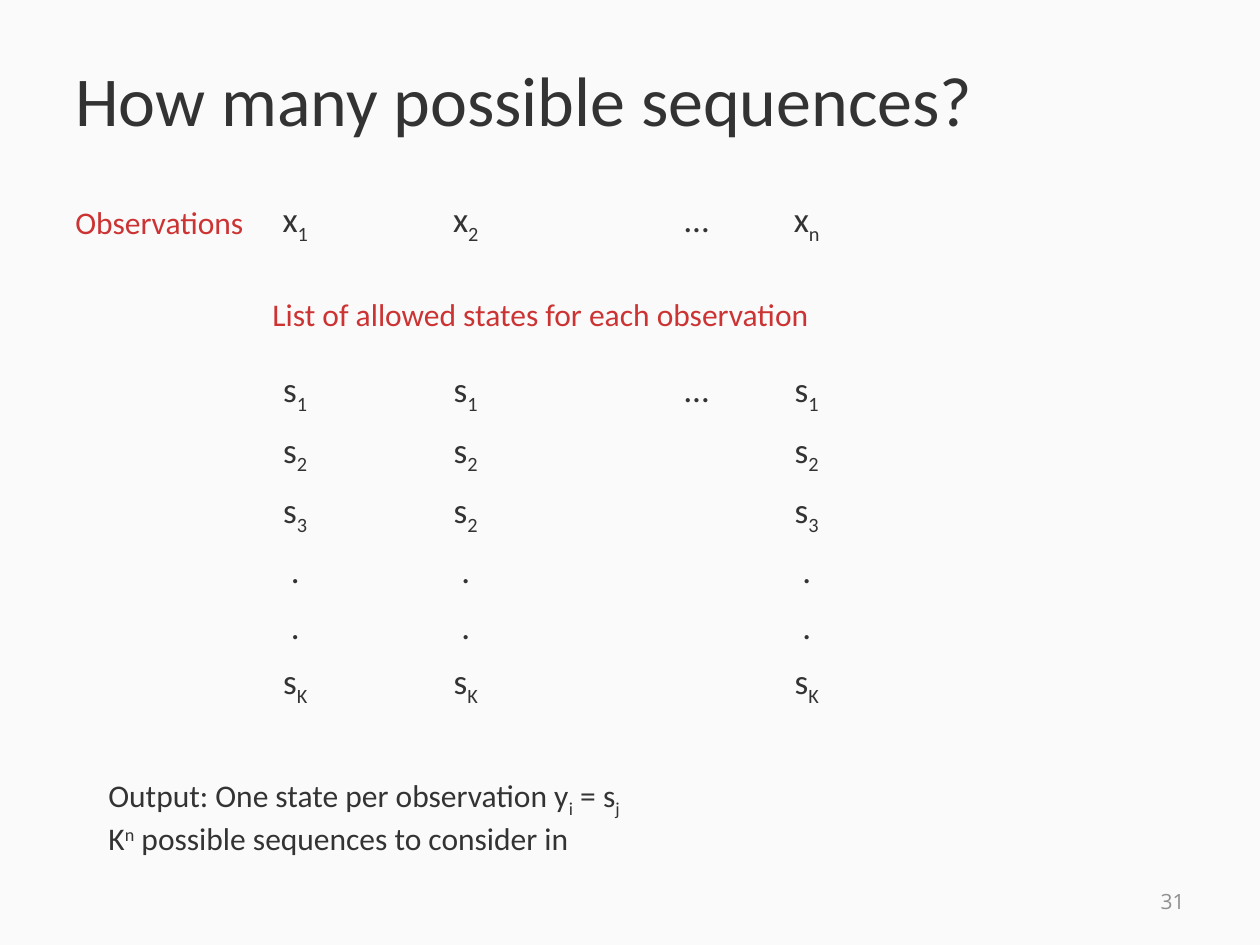
from pptx import Presentation
from pptx.dml.color import RGBColor as RGB
from pptx.enum.text import MSO_ANCHOR as Anchor, MSO_AUTO_SIZE as Auto, PP_ALIGN as Align
from pptx.util import Inches, Pt

PAPER = RGB(0xFA, 0xFA, 0xFA)
INK = RGB(0x33, 0x33, 0x33)
RED = RGB(0xCC, 0x33, 0x33)
GRAY = RGB(0x90, 0x90, 0x90)
SCALE = Inches(1) / 126
SHIFT = {"_": "-25000", "^": "30000"}
PLAIN = "{2D5ABB26-0587-4C30-8999-92F81FD0307C}"


def emu(*px):
    return [round(n * SCALE) for n in px]


class Sheet:
    """Hold the text style and the current slide; '|_' and '|^' start sub- and superscripts."""

    def __init__(self, slide, font="Calibri", size=18):
        self.slide, self.font, self.size = slide, font, size
        fill = slide.background.fill
        fill.solid()
        fill.fore_color.rgb = PAPER

    def line(self, par, text, color=INK, size=None, font=None, align=Align.LEFT):
        par.alignment = align
        for part in text.split("|"):
            run = par.add_run()
            run.text = part.lstrip("_^")
            face = run.font
            face.name = font or self.font
            face.size = Pt(size or self.size)
            face.color.rgb = color
            if part[0] in SHIFT:
                face._element.set("baseline", SHIFT[part[0]])

    def text(self, box, lines, anchor=Anchor.TOP, wrap=True, grow=True, **style):
        frame = self.slide.shapes.add_textbox(*emu(*box)).text_frame
        frame.word_wrap = wrap
        frame.auto_size = Auto.SHAPE_TO_FIT_TEXT if grow else Auto.NONE
        frame.vertical_anchor = anchor
        for i, line in enumerate(lines):
            par = frame.add_paragraph() if i else frame.paragraphs[0]
            self.line(par, line, **style)

    def table(self, box, rows, size):
        shape = self.slide.shapes.add_table(len(rows), len(rows[0]), *emu(*box))
        grid = shape.table
        grid.first_row = grid.horz_banding = False
        grid._tbl.tblPr.find("{*}tableStyleId").text = PLAIN
        for r, row in enumerate(rows):
            for c, text in enumerate(row):
                cell = grid.cell(r, c)
                cell.fill.background()
                if text:
                    align = Align.RIGHT if text == "…" else Align.CENTER
                    self.line(cell.text_frame.paragraphs[0], text, size=size, align=align)


def main():
    deck = Presentation()
    deck.slide_width, deck.slide_height = emu(1260, 945)
    sheet = Sheet(deck.slides.add_slide(deck.slide_layouts[6]))

    sheet.text((63, 19, 1134, 158), ["How many possible sequences?"],
               anchor=Anchor.MIDDLE, grow=False, size=40)
    sheet.text((903, 876, 294, 50), ["31"], anchor=Anchor.MIDDLE, grow=False,
               color=GRAY, size=12, font="Open Sans", align=Align.RIGHT)

    gap = [""] * 4
    dots = [".", ".", "", "."]
    rows = [
        ["x|_1", "x|_2", "…", "x|_n"],
        gap,
        gap,
        ["s|_1", "s|_1", "…", "s|_1"],
        ["s|_2", "s|_2", "", "s|_2"],
        ["s|_3", "s|_2", "", "s|_3"],
        dots,
        dots,
        ["s|_K", "s|_K", "", "s|_K"],
        gap,
    ]
    sheet.table((210, 193, 682, 550), rows, size=20)

    sheet.text((260, 289, 588, 50), ["List of allowed states for each observation"], color=RED)
    sheet.text((63, 197, 215, 50), ["Observations"], color=RED)
    sheet.text((96, 770, 548, 89),
               ["Output: One state per observation y|_i| = s|_j",
                "K|^n| possible sequences to consider in"], wrap=False)
    deck.save("out.pptx")


if __name__ == "__main__":
    main()
